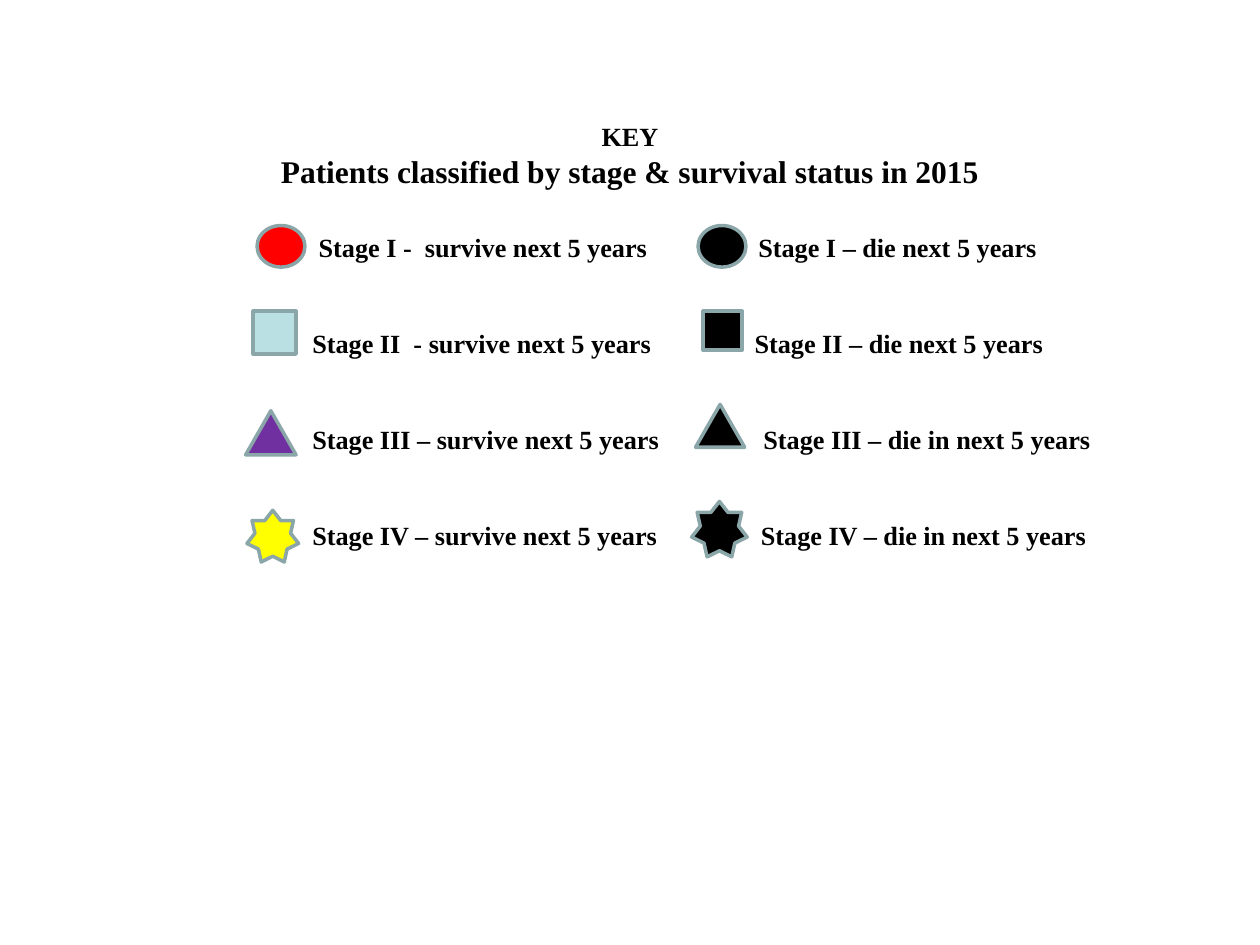
from lxml import etree
from pptx import Presentation
from pptx.dml.color import RGBColor
from pptx.enum.shapes import MSO_SHAPE
from pptx.enum.text import MSO_ANCHOR, PP_ALIGN
from pptx.oxml.ns import qn
from pptx.util import Inches, Pt

OVAL, CONNECTOR = MSO_SHAPE.OVAL, MSO_SHAPE.FLOWCHART_CONNECTOR
SQUARE, TRIANGLE = MSO_SHAPE.RECTANGLE, MSO_SHAPE.ISOSCELES_TRIANGLE
STAR = MSO_SHAPE.STAR_7_POINT
MIDDLE, CENTER = MSO_ANCHOR.MIDDLE, PP_ALIGN.CENTER

FONT = "Times New Roman"
COLORS = {"text": "000000", "outline": "8AA6A8", "die": "000000",
          "stage1": "FF0000", "stage2": "BBE0E3",
          "stage3": "7030A0", "stage4": "FFFF00"}

# Content: title lines with size, labels with left edge, symbols with box
TITLE = [("KEY", 15),
         ("Patients classified by stage & survival status in 2015", 18)]
LABELS = [  # survive label, left, die label, left
    ("Stage I -  survive next 5 years", 2.53, "Stage I – die next 5 years", 6.02),
    ("Stage II  - survive next 5 years", 2.48, "Stage II – die next 5 years", 5.99),
    ("Stage III – survive next 5 years", 2.48, "Stage III – die in next 5 years", 6.06),
    ("Stage IV – survive next 5 years", 2.48, "Stage IV – die in next 5 years", 6.04),
]
SYMBOLS = [  # shape, colour, left, top, width, height
    (OVAL, "stage1", 2.04, 1.79, 0.38, 0.33),
    (CONNECTOR, "die", 5.54, 1.79, 0.38, 0.33),
    (SQUARE, "stage2", 2.01, 2.47, 0.34, 0.34),
    (SQUARE, "die", 5.58, 2.47, 0.31, 0.31),
    (TRIANGLE, "stage3", 1.95, 3.26, 0.40, 0.35),
    (TRIANGLE, "die", 5.52, 3.21, 0.39, 0.34),
    (STAR, "stage4", 1.96, 4.05, 0.41, 0.41),
    (STAR, "die", 5.49, 3.98, 0.44, 0.44),
]
KEY_LEFT, INSET = 1.24, 0.1
ROW_GAP = 36.7


def rgb(name):
    return RGBColor.from_string(COLORS[name])


def add_text(slide, box, lines):
    """Add a text box with one bold paragraph for each (text, size)."""
    tf = slide.shapes.add_textbox(*map(Inches, box)).text_frame
    tf.word_wrap = True
    for i, (text, size) in enumerate(lines):
        p = tf.paragraphs[0] if i == 0 else tf.add_paragraph()
        p.text = text
        p.font.name, p.font.size, p.font.bold = FONT, Pt(size), True
        p.font.color.rgb = rgb("text")
    return tf


def set_tabs(p, stops):
    pPr = p._p.get_or_add_pPr()
    tabs = etree.Element(qn("a:tabLst"))
    for stop in stops:
        etree.SubElement(tabs, qn("a:tab"), pos=str(Inches(stop)), algn="l")
    pPr.insert_element_before(tabs, "a:defRPr", "a:extLst")


prs = Presentation()
prs.slide_width, prs.slide_height = Inches(10), Inches(7.5)
slide = prs.slides.add_slide(prs.slide_layouts[6])

# Title
tf = add_text(slide, (0.5, 0.94, 9, 0.67), TITLE)
tf.vertical_anchor = MIDDLE
tf.margin_bottom = Inches(0.14)
for p in tf.paragraphs:
    p.alignment = CENTER

# Key labels, placed with tab stops
rows = [(f"\t{survive}\t{die}", 15) for survive, _, die, _ in LABELS]
tf = add_text(slide, (KEY_LEFT, 1.79, 8.03, 2.63), rows)
for i, (p, (_, left, _, right)) in enumerate(zip(tf.paragraphs, LABELS)):
    if i:
        p.space_before = Pt(ROW_GAP)
    set_tabs(p, [x - KEY_LEFT - INSET for x in (left, right)])

# Key symbols
for kind, color, *box in SYMBOLS:
    sp = slide.shapes.add_shape(kind, *map(Inches, box))
    sp.shadow.inherit = False
    sp.fill.solid()
    sp.fill.fore_color.rgb = rgb(color)
    sp.line.color.rgb = rgb("outline")
    sp.line.width = Pt(2)

prs.save("out.pptx")
